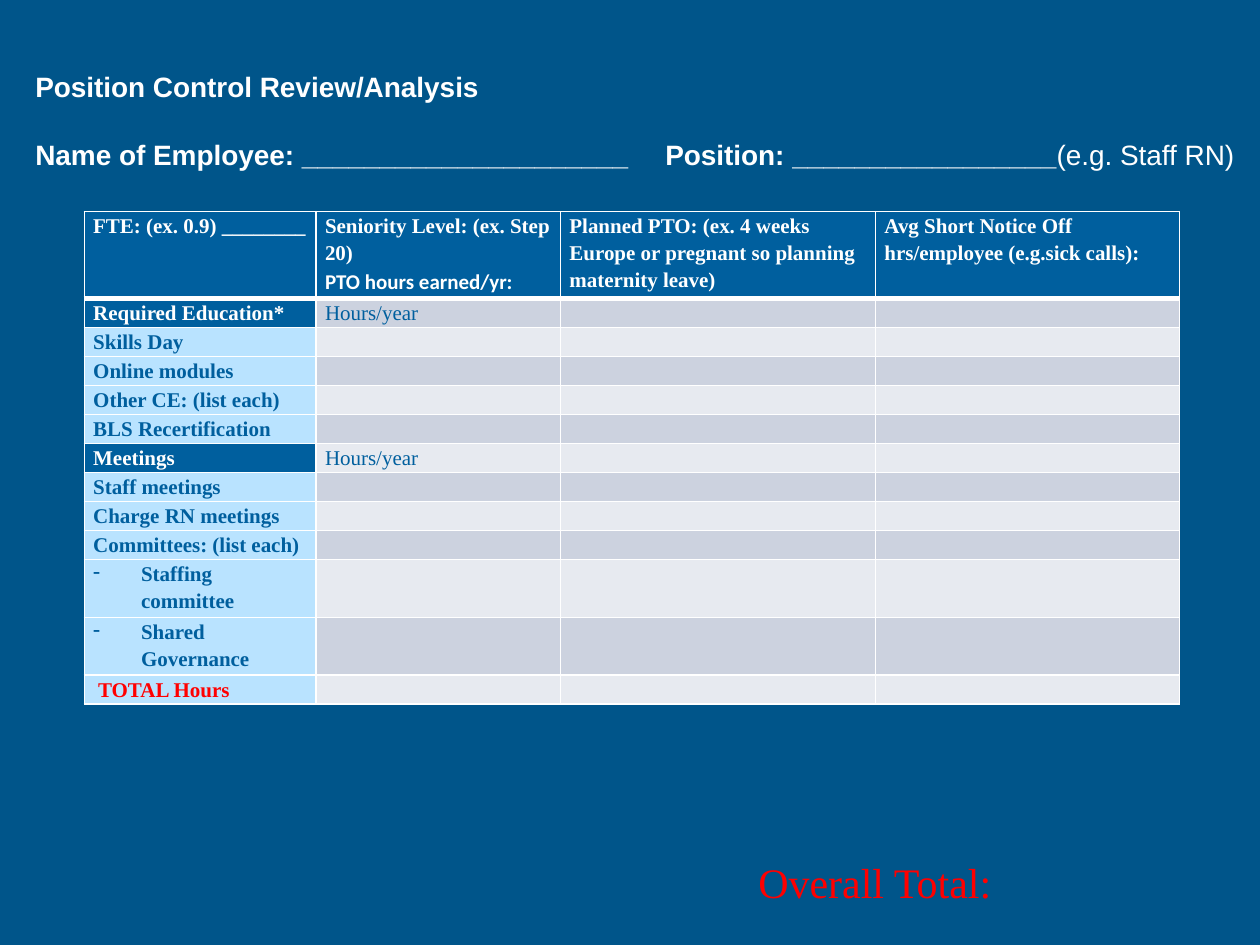
from dataclasses import dataclass

import lxml.etree
import pptx
import pptx.dml.color
import pptx.enum.text
import pptx.oxml.ns
import pptx.util

Inches = pptx.util.Inches
Pt = pptx.util.Pt
qn = pptx.oxml.ns.qn


@dataclass(frozen=True)
class Theme:
    background: str = "00558A"
    accent: str = "005F9E"
    label: str = "B9E3FF"
    bands: tuple = ("CCD2DF", "E7EAF0")
    white: str = "FFFFFF"
    red: str = "FF0000"
    heading_font: str = "Arial"
    table_font: str = "Times New Roman"
    note_font: str = "Calibri"
    heading_size: float = 16
    table_size: float = 12
    total_size: float = 24


@dataclass(frozen=True)
class Row:
    label: str
    section: bool = False
    bulleted: bool = False
    total: bool = False


THEME = Theme()
HEADERS = (
    ("FTE: (ex. 0.9) ________",),
    ("Seniority Level: (ex. Step 20)", "PTO hours earned/yr:"),
    ("Planned PTO: (ex. 4 weeks Europe or pregnant so planning maternity leave)",),
    ("Avg Short Notice Off hrs/employee (e.g.sick calls):",),
)
ROWS = (
    Row("Required Education*", section=True),
    Row("Skills Day"),
    Row("Online modules"),
    Row("Other CE: (list each)"),
    Row("BLS Recertification"),
    Row("Meetings", section=True),
    Row("Staff meetings"),
    Row("Charge RN meetings"),
    Row("Committees: (list each)"),
    Row("Staffing committee", bulleted=True),
    Row("Shared Governance", bulleted=True),
    Row(" TOTAL Hours", total=True),
)
COLUMN_WIDTHS = (1.84, 1.94, 2.5, 2.41)
HEADER_HEIGHT = 0.69
LINE_HEIGHT = 0.23


def rgb(color: str) -> pptx.dml.color.RGBColor:
    return pptx.dml.color.RGBColor.from_string(color)


def style_font(font, name: str, size: float, color: str, bold: bool = False) -> None:
    font.name = name
    font.size = Pt(size)
    font.color.rgb = rgb(color)
    font.bold = bold


def format_cell(cell, fill: str, bottom: float = 1, top: float = 1) -> None:
    """Set the margins, white borders (widths in points) and fill of a cell."""
    cell.margin_left = cell.margin_right = Inches(0.07)
    cell.margin_top = cell.margin_bottom = 0
    properties = cell._tc.get_or_add_tcPr()
    for tag, width in (("a:lnL", 1), ("a:lnR", 1), ("a:lnT", top), ("a:lnB", bottom)):
        line = lxml.etree.SubElement(properties, qn(tag), w=str(Pt(width)))
        solid = lxml.etree.SubElement(line, qn("a:solidFill"))
        lxml.etree.SubElement(solid, qn("a:srgbClr"), val=THEME.white)
    cell.fill.solid()
    cell.fill.fore_color.rgb = rgb(fill)


def write_cell(cell, lines: tuple, color: str, bold: bool = True) -> None:
    cell.text = "\n".join(lines)
    for para in cell.text_frame.paragraphs:
        para.line_spacing = 1.15
        style_font(para.font, THEME.table_font, THEME.table_size, color, bold)


def size_empty_cell(cell) -> None:
    """Keep an empty cell from growing its row."""
    para = cell.text_frame.paragraphs[0]
    size = str(int(THEME.table_size * 100))
    lxml.etree.SubElement(para._p, qn("a:endParaRPr"), sz=size)


def add_dash_bullet(para) -> None:
    properties = para._p.get_or_add_pPr()
    properties.set("marL", str(Inches(0.38)))
    properties.set("indent", str(-Inches(0.38)))
    bullet = lxml.etree.Element(qn("a:buChar"), char="-")
    properties.find(qn("a:defRPr")).addprevious(bullet)


def add_heading(slide) -> None:
    title = slide.shapes.title
    title.left, title.top = Inches(0.18), Inches(0.5)
    title.width, title.height = Inches(9.82), Inches(1.18)
    frame = title.text_frame
    frame.auto_size = pptx.enum.text.MSO_AUTO_SIZE.NONE
    frame.word_wrap = False
    frame.vertical_anchor = pptx.enum.text.MSO_ANCHOR.TOP
    frame.text = (
        "Position Control Review/Analysis\n"
        "Name of Employee: _____________________\tPosition: _________________"
    )
    for para in frame.paragraphs:
        para.alignment = pptx.enum.text.PP_ALIGN.LEFT
        style_font(para.font, THEME.heading_font, THEME.heading_size, THEME.white, True)
    name_line = frame.paragraphs[1]
    name_line.space_before = Pt(20)
    example = name_line.add_run()
    example.text = "(e.g. Staff RN)"
    example.font.bold = False


def add_review_table(slide) -> None:
    height = HEADER_HEIGHT + LINE_HEIGHT * sum(1 + row.bulleted for row in ROWS)
    table = slide.shapes.add_table(
        len(ROWS) + 1, len(HEADERS), Inches(0.67), Inches(1.68),
        Inches(sum(COLUMN_WIDTHS)), Inches(height),
    ).table
    table.first_row = table.horz_banding = False
    for column, width in zip(table.columns, COLUMN_WIDTHS):
        column.width = Inches(width)

    table.rows[0].height = Inches(HEADER_HEIGHT)
    for index, lines in enumerate(HEADERS):
        cell = table.cell(0, index)
        format_cell(cell, THEME.accent, bottom=3)
        write_cell(cell, lines, THEME.white)
    table.cell(0, 1).text_frame.paragraphs[1].font.name = THEME.note_font

    for number, row in enumerate(ROWS, start=1):
        table.rows[number].height = Inches(LINE_HEIGHT * (1 + row.bulleted))
        top = 3 if number == 1 else 1
        label = table.cell(number, 0)
        format_cell(label, THEME.accent if row.section else THEME.label, top=top)
        color = THEME.white if row.section else THEME.red if row.total else THEME.accent
        write_cell(label, (row.label,), color)
        if row.bulleted:
            add_dash_bullet(label.text_frame.paragraphs[0])
        for index in range(1, len(HEADERS)):
            cell = table.cell(number, index)
            format_cell(cell, THEME.bands[(number - 1) % 2], top=top)
            if row.section and index == 1:
                write_cell(cell, ("Hours/year",), THEME.accent, bold=False)
            else:
                size_empty_cell(cell)


def add_overall_total(slide) -> None:
    box = slide.shapes.add_textbox(Inches(5.92), Inches(6.75), Inches(3.33), Inches(0.5))
    box.text_frame.word_wrap = True
    para = box.text_frame.paragraphs[0]
    para.text = "Overall Total:"
    style_font(para.font, THEME.table_font, THEME.total_size, THEME.red)


def main() -> None:
    deck = pptx.Presentation()
    deck.slide_width, deck.slide_height = Inches(10), Inches(7.5)
    slide = deck.slides.add_slide(deck.slide_layouts.get_by_name("Title Only"))
    slide.background.fill.solid()
    slide.background.fill.fore_color.rgb = rgb(THEME.background)
    add_heading(slide)
    add_review_table(slide)
    add_overall_total(slide)
    deck.save("out.pptx")


if __name__ == "__main__":
    main()
